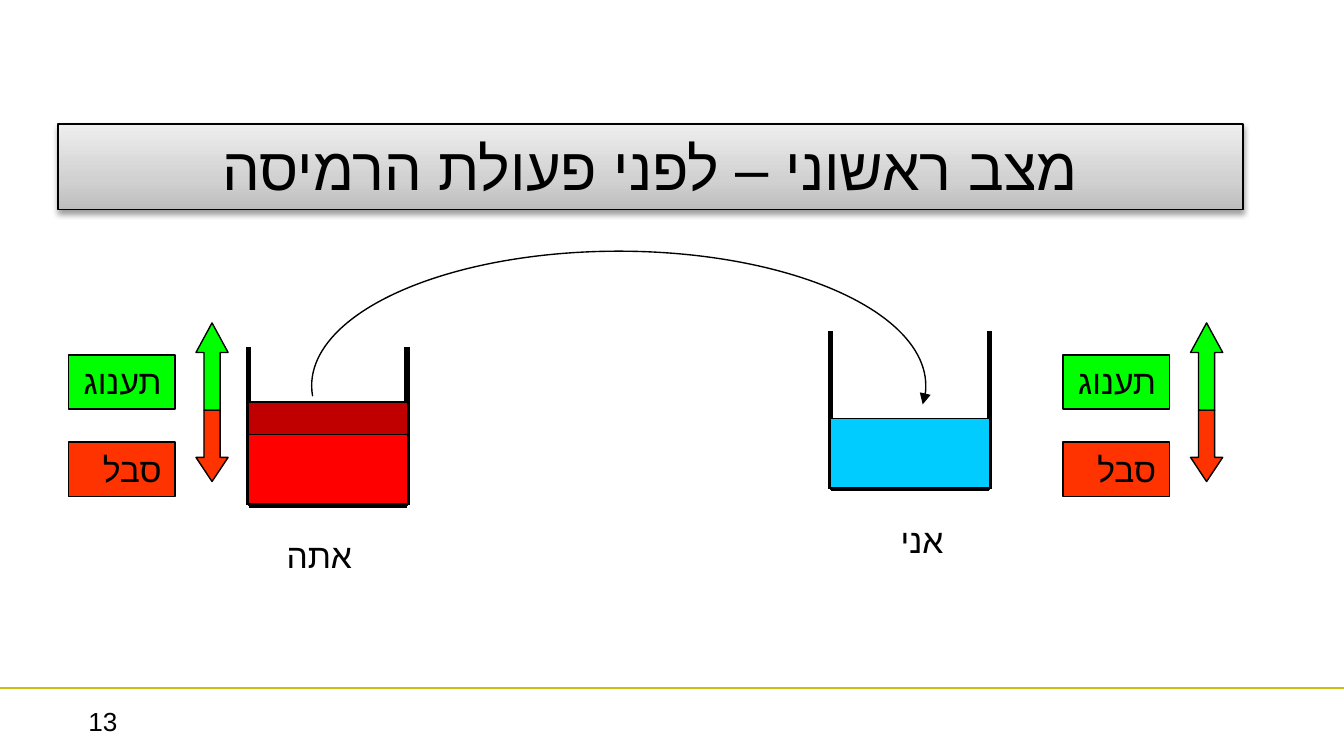
from copy import deepcopy
from dataclasses import dataclass

from lxml.etree import SubElement
from pptx import Presentation
from pptx.dml.color import RGBColor
from pptx.enum.shapes import MSO_CONNECTOR, MSO_SHAPE
from pptx.enum.text import MSO_ANCHOR, PP_ALIGN
from pptx.oxml.ns import qn
from pptx.util import Pt


@dataclass(frozen=True)
class Theme:
    font: str = "Arial"
    title_size: int = 32
    label_size: int = 18
    number_size: int = 14
    ink: str = "000000"
    rule: str = "CBBE0F"
    pleasure: str = "00FF00"
    suffering: str = "FF3300"
    water: str = "00CCFF"
    blood: str = "FF0000"
    dark_blood: str = "C00000"
    title_stops: tuple = ((0, "BDBDBD"), (0.35, "D1D1D1"), (1, "EEEEEE"))


class Painter:
    def __init__(self, slide, theme):
        self.slide = slide
        self.theme = theme

    def line(self, x1, y1, x2, y2, weight, color=None):
        line = self.slide.shapes.add_connector(
            MSO_CONNECTOR.STRAIGHT, Pt(x1), Pt(y1), Pt(x2), Pt(y2))
        line.line.color.rgb = RGBColor.from_string(color or self.theme.ink)
        line.line.width = Pt(weight)
        SubElement(line._element.spPr, qn("a:effectLst"))

    def shape(self, kind, left, top, width, height, fill=None, weight=0.75):
        shape = self.slide.shapes.add_shape(
            kind, Pt(left), Pt(top), Pt(width), Pt(height))
        shape.shadow.inherit = False
        if fill:
            shape.fill.solid()
            shape.fill.fore_color.rgb = RGBColor.from_string(fill)
        else:
            shape.fill.background()
        shape.line.color.rgb = RGBColor.from_string(self.theme.ink)
        shape.line.width = Pt(weight)
        return shape

    def fill_text(self, box, text, size, align=PP_ALIGN.RIGHT):
        """Fill a box with one right-to-left line of text."""
        frame = box.text_frame
        frame.word_wrap = True
        frame.vertical_anchor = MSO_ANCHOR.TOP
        frame.text = text
        para = frame.paragraphs[0]
        para.alignment = align
        para._p.get_or_add_pPr().set("rtl", "1")
        span = para.runs[0]
        span.font.size = Pt(size)
        span.font.name = self.theme.font
        span.font.color.rgb = RGBColor.from_string(self.theme.ink)
        SubElement(span._r.get_or_add_rPr(), qn("a:cs"), typeface=self.theme.font)

    def text(self, left, top, width, height, text, size, align=PP_ALIGN.RIGHT):
        box = self.slide.shapes.add_textbox(
            Pt(left), Pt(top), Pt(width), Pt(height))
        self.fill_text(box, text, size, align)

    def vessel(self, left, top, fill, side=85, level=38):
        """Draw an open container filled up to a level above its floor."""
        right, bottom = left + side, top + side
        for x in (right, left):
            self.line(x, top, x, bottom, 3)
        self.shape(MSO_SHAPE.RECTANGLE, left, bottom - level, side, level, fill)
        self.line(left, bottom, right, bottom, 2.25)

    def gauge(self, label_left, arrow_left):
        """Draw the pleasure and suffering labels with their two arrows."""
        rows = (
            ("תענוג", self.theme.pleasure, MSO_SHAPE.UP_ARROW, 173, 46.8, 0.92, 190),
            ("סבל", self.theme.suffering, MSO_SHAPE.DOWN_ARROW, 219.8, 38.2, 0.75, 237),
        )
        for word, color, kind, arrow_top, length, head, label_top in rows:
            arrow = self.shape(kind, arrow_left, arrow_top, 17.2, length, color)
            arrow.adjustments[1] = head
            label = self.shape(
                MSO_SHAPE.RECTANGLE, label_left, label_top, 57, 29, color, 1)
            self.fill_text(label, word, self.theme.label_size)

    def curved_arrow(self, left, top, width, height, start, end):
        """Draw part of an ellipse; angles are clockwise degrees from the right."""
        arc = self.shape(MSO_SHAPE.ARC, left, top, width, height)
        for index, degrees in enumerate((start, end)):
            arc.adjustments[index] = degrees * 0.6
        SubElement(arc.line._get_or_add_ln(), qn("a:tailEnd"), type="triangle")

    def title(self, left, top, width, height, text):
        box = self.shape(MSO_SHAPE.RECTANGLE, left, top, width, height)
        box.fill.gradient()
        box.fill.gradient_angle = 90
        stops = box._element.spPr.find(qn("a:gradFill")).find(qn("a:gsLst"))
        stops.insert(1, deepcopy(stops[0]))
        for stop, (position, color) in zip(
                box.fill.gradient_stops, self.theme.title_stops):
            stop.position = position
            stop.color.rgb = RGBColor.from_string(color)
        effects = box._element.spPr.find(qn("a:effectLst"))
        shadow = SubElement(
            effects, qn("a:outerShdw"), blurRad=str(Pt(3.1)), dist=str(Pt(1.6)),
            dir="5400000", rotWithShape="0")
        color = SubElement(shadow, qn("a:srgbClr"), val=self.theme.ink)
        SubElement(color, qn("a:alpha"), val="38000")
        self.fill_text(box, text, self.theme.title_size, PP_ALIGN.CENTER)
        box.text_frame.vertical_anchor = MSO_ANCHOR.MIDDLE


def main():
    deck = Presentation()
    deck.slide_width, deck.slide_height = Pt(720), Pt(405)
    theme = Theme()
    painter = Painter(deck.slides.add_slide(deck.slide_layouts[6]), theme)

    painter.text(-28.8, 374.4, 167.8, 28, "13", theme.number_size, PP_ALIGN.CENTER)
    painter.line(0, 368.6, 720, 368.6, 1.5, theme.rule)

    painter.vessel(445, 177.1, theme.water)
    painter.vessel(133.2, 185.8, theme.blood)
    painter.shape(MSO_SHAPE.RECTANGLE, 133.2, 215.4, 85, 17.4, theme.dark_blood)
    painter.curved_arrow(167, 134.6, 329, 144, start=178, end=3.55)
    painter.text(144.7, 283, 51, 29, "אתה", theme.label_size)
    painter.text(473, 275, 39.6, 29, "אני", theme.label_size)

    for offset in (0, 532.8):
        painter.gauge(36.7 + offset, 105 + offset)
    painter.title(31, 66.4, 635, 46, "מצב ראשוני – לפני פעולת הרמיסה")

    deck.save("out.pptx")


if __name__ == "__main__":
    main()
